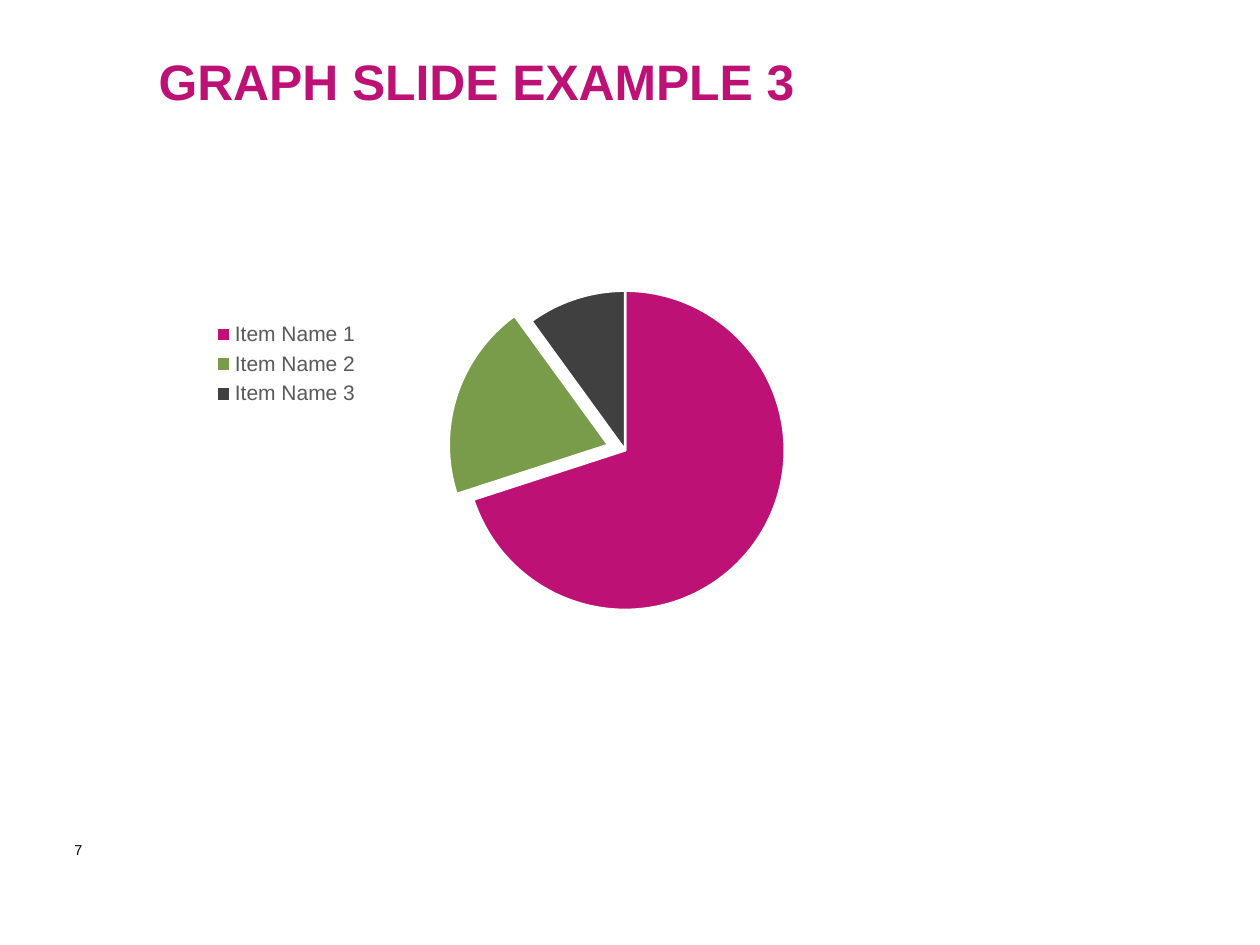
from pptx import Presentation
from pptx.chart.data import CategoryChartData
from pptx.dml.color import RGBColor
from pptx.enum.chart import XL_CHART_TYPE, XL_LEGEND_POSITION
from pptx.enum.text import MSO_ANCHOR, MSO_AUTO_SIZE, PP_ALIGN
from pptx.oxml import parse_xml
from pptx.oxml.ns import nsdecls
from pptx.util import Pt

EMU_PER_PX = 914400 // 126
COLOURS = {
    "magenta": "BD1176",
    "green": "789C49",
    "charcoal": "404041",
    "legend": "595959",
    "black": "000000",
    "white": "FFFFFF",
}


def px(value):
    return value * EMU_PER_PX


def colour(name):
    return RGBColor.from_string(COLOURS[name])


def manual_layout(box, frame, target=""):
    left, top, width, height = box
    frame_left, frame_top, frame_width, frame_height = frame
    fractions = {
        "x": (left - frame_left) / frame_width,
        "y": (top - frame_top) / frame_height,
        "w": width / frame_width,
        "h": height / frame_height,
    }
    modes = '<c:xMode val="edge"/><c:yMode val="edge"/>'
    values = "".join(f'<c:{key} val="{value:.2f}"/>' for key, value in fractions.items())
    return parse_xml(
        f'<c:layout {nsdecls("c")}><c:manualLayout>{target}{modes}{values}'
        "</c:manualLayout></c:layout>"
    )


class SlideBuilder:
    font_name = "Arial"

    def __init__(self, presentation):
        self.slide = presentation.slides.add_slide(presentation.slide_layouts[5])

    def style_font(self, font, size, colour_name, bold=False):
        font.name = self.font_name
        font.size = Pt(size)
        font.bold = bold
        font.color.rgb = colour(colour_name)

    def fill_text(self, shape, text, size, colour_name, anchor, bold=False):
        frame = shape.text_frame
        frame.text = text
        frame.word_wrap = True
        frame.auto_size = MSO_AUTO_SIZE.NONE
        frame.vertical_anchor = anchor
        paragraph = frame.paragraphs[0]
        paragraph.alignment = PP_ALIGN.LEFT
        self.style_font(paragraph.runs[0].font, size, colour_name, bold)
        return paragraph

    def title(self, text, box):
        shape = self.slide.shapes.title
        shape.left, shape.top, shape.width, shape.height = map(px, box)
        paragraph = self.fill_text(shape, text, 28.5, "magenta", MSO_ANCHOR.MIDDLE, bold=True)
        paragraph.line_spacing = 0.9

    def slide_number(self, text, box):
        shape = self.slide.shapes.add_textbox(*map(px, box))
        self.fill_text(shape, text, 8.2, "black", MSO_ANCHOR.TOP)

    def pie(self, items, box, plot_box, legend_box, exploded):
        data = CategoryChartData()
        data.categories = [name for name, _, _ in items]
        data.add_series("Series 1", [value for _, value, _ in items])
        chart = self.slide.shapes.add_chart(XL_CHART_TYPE.PIE, *map(px, box), data).chart
        chart.has_title = False
        self.style_font(chart.font, 10, "black")

        chart.has_legend = True
        legend = chart.legend
        legend.position = XL_LEGEND_POSITION.BOTTOM
        legend.include_in_layout = False
        self.style_font(legend.font, 12, "legend")

        plot = chart.plots[0]
        plot.vary_by_categories = True
        series = plot.series[0]
        for index, (_, _, colour_name) in enumerate(items):
            slice_format = series.points[index].format
            slice_format.fill.solid()
            slice_format.fill.fore_color.rgb = colour(colour_name)
            slice_format.line.color.rgb = colour("white")
            slice_format.line.width = Pt(1.5)

        point = series._element.xpath(f'c:dPt[c:idx/@val="{exploded}"]')[0]
        explosion = parse_xml(f'<c:explosion {nsdecls("c")} val="11"/>')
        point.find("{*}spPr").addprevious(explosion)

        plot_area = chart._chartSpace.chart.plotArea
        for layout in plot_area.findall("{*}layout"):
            plot_area.remove(layout)
        plot_area.insert(0, manual_layout(plot_box, box, '<c:layoutTarget val="inner"/>'))
        for layout in legend._element.findall("{*}layout"):
            legend._element.remove(layout)
        legend._element.find("{*}legendPos").addnext(manual_layout(legend_box, box))


def main():
    presentation = Presentation()
    presentation.slide_width = px(1260)
    presentation.slide_height = px(945)
    builder = SlideBuilder(presentation)
    builder.slide_number("7", (62, 835, 54, 68))
    builder.pie(
        [
            ("Item Name 1", 70, "magenta"),
            ("Item Name 2", 20, "green"),
            ("Item Name 3", 10, "charcoal"),
        ],
        box=(146, 272, 968, 401),
        plot_box=(468, 290, 324, 324),
        legend_box=(218, 317, 150, 96),
        exploded=1,
    )
    builder.title("GRAPH SLIDE EXAMPLE 3", (146, 42, 968, 84))
    presentation.save("out.pptx")


if __name__ == "__main__":
    main()
